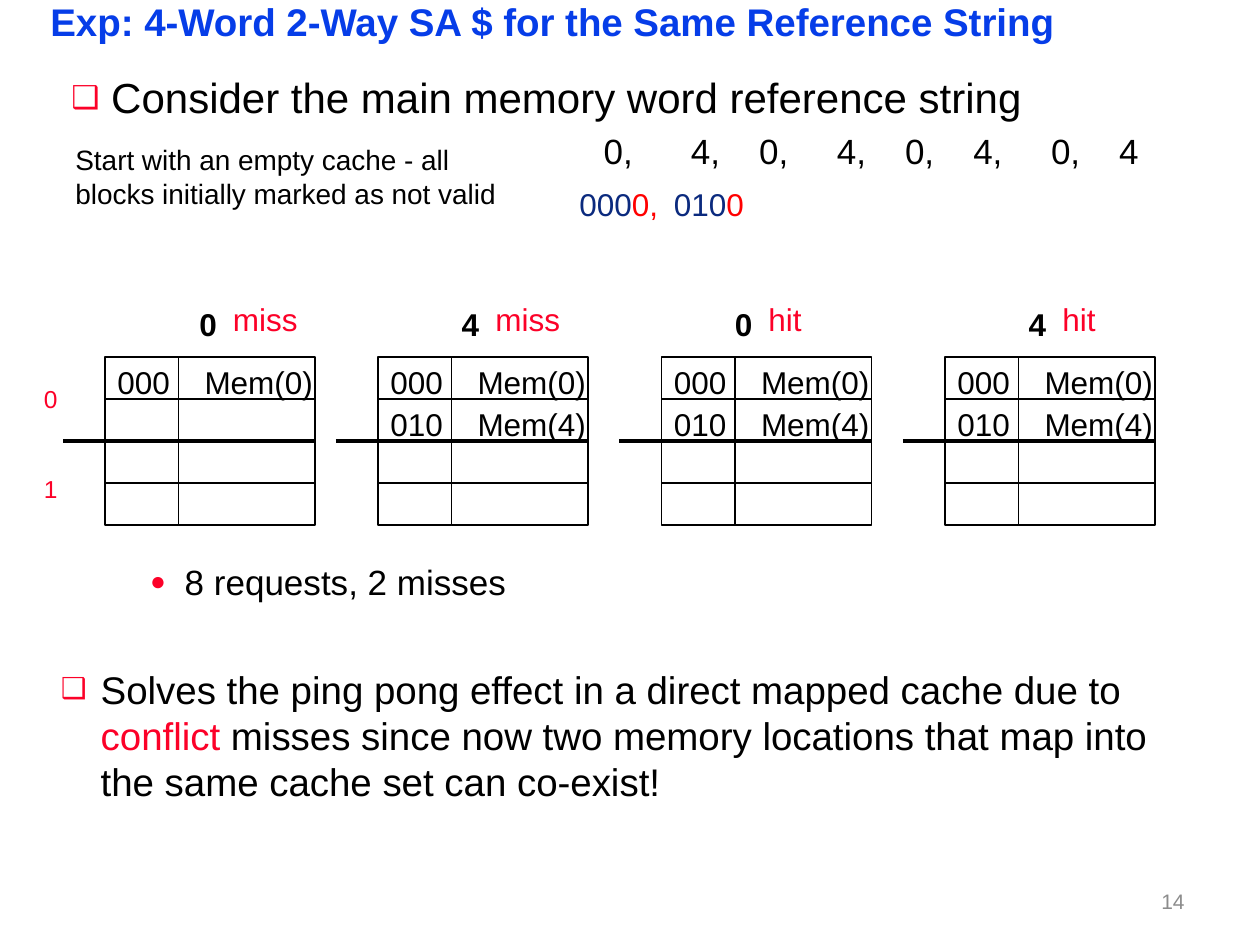
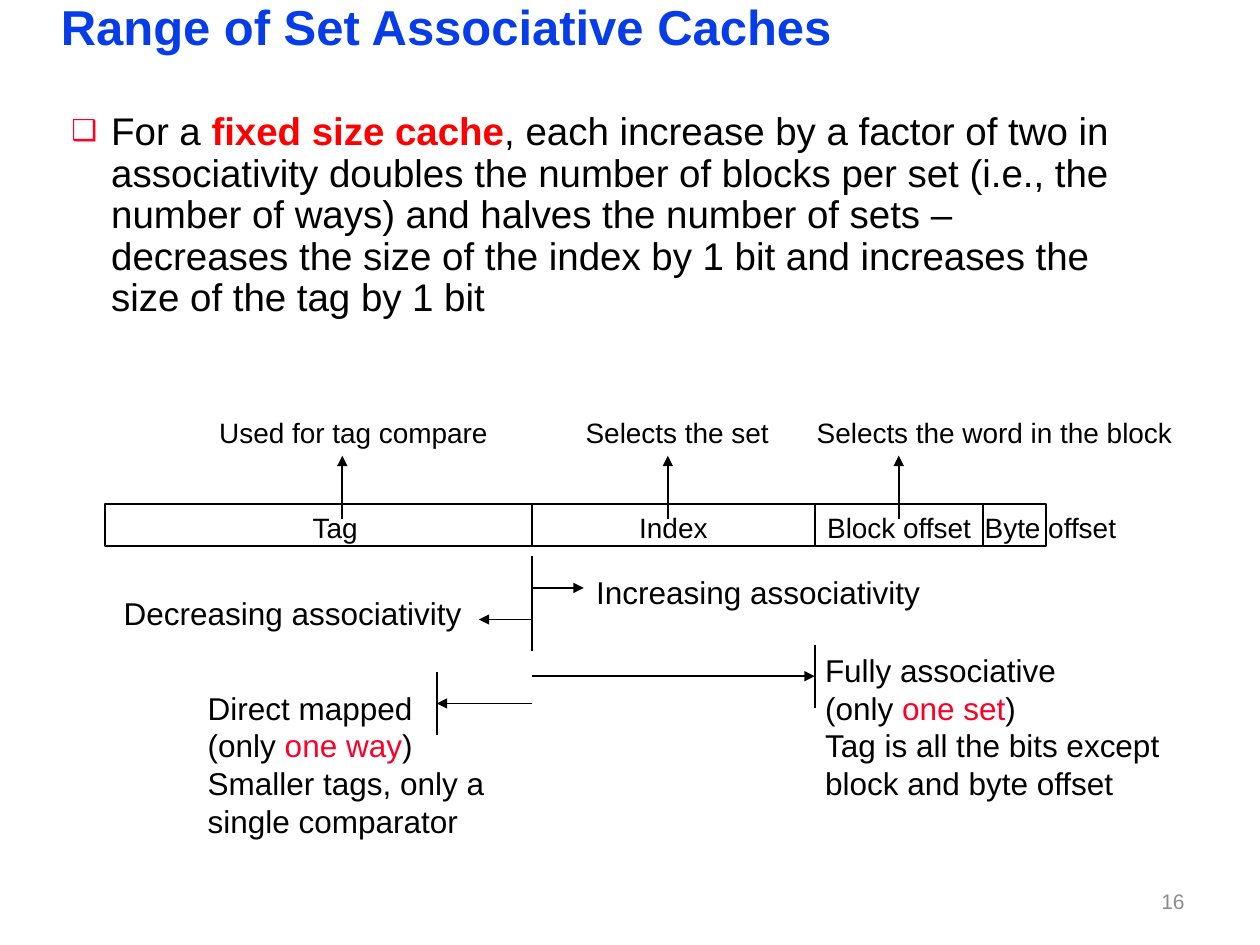
from dataclasses import dataclass

from lxml import etree
from pptx import Presentation
from pptx.dml.color import RGBColor
from pptx.enum.shapes import MSO_CONNECTOR, MSO_SHAPE
from pptx.enum.text import MSO_ANCHOR, MSO_AUTO_SIZE, PP_ALIGN
from pptx.oxml.ns import qn
from pptx.util import Pt

LEFT, RIGHT = PP_ALIGN.LEFT, PP_ALIGN.RIGHT
TOP, MIDDLE = MSO_ANCHOR.TOP, MSO_ANCHOR.MIDDLE
FIT_SHAPE = MSO_AUTO_SIZE.SHAPE_TO_FIT_TEXT
STRAIGHT, RECTANGLE = MSO_CONNECTOR.STRAIGHT, MSO_SHAPE.RECTANGLE
PX = 7620  # 120 px to the inch
TITLE_ONLY = 5


@dataclass(frozen=True)
class Theme:
    font: str = "Arial"
    ink: str = "000000"
    title: str = "063DE8"
    accent: str = "FC0128"
    red: str = "FF0000"
    navy: str = "0B2A7E"
    grey: str = "8C8C8C"
    lead: int = 24
    body: int = 22
    detail: int = 20
    label: int = 18
    note: int = 16
    small: int = 14
    footer: int = 12
    thin: float = 1
    thick: float = 2.25


theme = Theme()
SQUARE = {"bullet": "❑", "margin": 38, "hang": 38, "inset": (8, 4)}
DOT = {"bullet": "●", "margin": 98, "hang": 33, "inset": (8, 4)}


def write(page, place, text, frame=None, size=theme.label, color=theme.ink, bold=False,
          align=LEFT, anchor=TOP, wrap=True, inset=(12, 6), spacing=None, before=None,
          bullet=None, margin=0, hang=0, tabs=()):
    """Write paragraphs of spans; a span is a string or (string, colour, bold)."""
    if place:
        if frame is None:
            frame = page.shapes.add_textbox(*[length * PX for length in place]).text_frame
        frame.word_wrap, frame.vertical_anchor = wrap, anchor
        frame.auto_size = FIT_SHAPE
        frame.margin_left = frame.margin_right = inset[0] * PX
        frame.margin_top = frame.margin_bottom = inset[1] * PX
    for number, spans in enumerate([text] if isinstance(text, str) else text):
        para = frame.add_paragraph() if number or frame.text else frame.paragraphs[0]
        para.alignment = align
        if spacing:
            para.line_spacing = spacing
        if before:
            para.space_before = Pt(before)
        properties = para._p.get_or_add_pPr()
        if bullet:
            properties.set("marL", str(margin * PX))
            properties.set("indent", str(-hang * PX))
            tint = etree.SubElement(properties, qn("a:buClr"))
            etree.SubElement(tint, qn("a:srgbClr"), val=theme.accent)
            etree.SubElement(properties, qn("a:buSzPct"), val="75000")
            etree.SubElement(properties, qn("a:buFont"), typeface=theme.font)
            etree.SubElement(properties, qn("a:buChar"), char=bullet)
        if tabs:
            stops = etree.SubElement(properties, qn("a:tabLst"))
            for stop in tabs:
                etree.SubElement(stops, qn("a:tab"), pos=str(stop * PX), algn="l")
        for span in [spans] if isinstance(spans, str) else spans:
            words, tone, heavy = (span, color, bold) if isinstance(span, str) else span
            run = para.add_run()
            run.text = words
            run.font.name, run.font.size, run.font.bold = theme.font, Pt(size), heavy
            run.font.color.rgb = RGBColor.from_string(tone)
    return frame


def draw_line(page, start, end, width=theme.thin, arrow=False):
    connector = page.shapes.add_connector(
        STRAIGHT, *[length * PX for length in (*start, *end)])
    connector.line.color.rgb = RGBColor.from_string(theme.ink)
    connector.line.width = Pt(width)
    properties = connector._element.spPr
    if arrow:
        etree.SubElement(properties.find(qn("a:ln")), qn("a:tailEnd"), type="triangle")
    etree.SubElement(properties, qn("a:effectLst"))


deck = Presentation()
deck.slide_width, deck.slide_height = 1200 * PX, 900 * PX

# Titles and page numbers
pages = []
for heading, size, place, number in (
    ("Exp: 4-Word 2-Way SA $ for the Same Reference String", 22, (40, 0, 1070, 46), "14"),
    ("Range of Set Associative Caches", 28, (50, 0, 1070, 55), "16"),
):
    page = deck.slides.add_slide(deck.slide_layouts[TITLE_ONLY])
    title = page.shapes.title
    title.left, title.top, title.width, title.height = [length * PX for length in place]
    write(page, place, heading, frame=title.text_frame, size=size, color=theme.title,
          bold=True, inset=(8, 4), spacing=0.87)
    write(page, (860, 834, 280, 48), number, size=theme.footer, color=theme.grey,
          align=RIGHT, anchor=MIDDLE)
    pages.append(page)
example, associativity = pages

# Outlines of the cache columns and of the address bar
ROW, ROWS, CACHE_TOP = 40, 4, 340
TAG_WIDTH, DATA_WIDTH = 70, 130
BAR_TOP, BAR_HEIGHT = 480, 40
CACHES = (100, 360, 630, 900)
columns = [(x + shift, width) for x in CACHES
           for shift, width in ((0, TAG_WIDTH), (TAG_WIDTH, DATA_WIDTH))]
outlines = [(example, (x, CACHE_TOP, width, ROWS * ROW)) for x, width in columns]
outlines.append((associativity, (100, BAR_TOP, 896, BAR_HEIGHT)))
for page, place in outlines:
    outline = page.shapes.add_shape(RECTANGLE, *[length * PX for length in place])
    outline.shadow.inherit = False
    outline.fill.background()
    outline.line.color.rgb = RGBColor.from_string(theme.ink)
    outline.line.width = Pt(theme.thin)
for x, width in columns:
    for row in range(1, ROWS):
        y = CACHE_TOP + row * ROW
        draw_line(example, (x, y), (x + width, y))

# Reference string
lead = write(example, (60, 70, 1070, 101), "Consider the main memory word reference string",
             size=theme.lead, spacing=0.9, **SQUARE)
write(example, None, "\t0,\t4,\t0,\t4,\t0,\t4,\t0,\t4", frame=lead, size=theme.detail,
      spacing=0.85, before=7.3, tabs=(507, 590, 655, 729, 794, 859, 933, 998))
write(example, (60, 130, 450, 77),
      "Start with an empty cache - all blocks initially marked as not valid", size=theme.note)
for x, width, tag, index in ((540, 100, "000", "0,"), (630, 91, "010", "0")):
    write(example, (x, 170, width, 48), [[(tag, theme.navy, False), (index, theme.red, False)]],
          wrap=False)

# Cache contents after each reference
first_block, second_block = "000\tMem(0)", "010\tMem(4)"
for x, outcome_x, word, outcome, blocks in zip(
    CACHES, (210, 460, 720, 1000), "0404", ("miss", "miss", "hit", "hit"),
    ([first_block], *[[first_block, second_block]] * 3),
):
    write(example, (outcome_x - 32, 285, 41, 48), word, bold=True, wrap=False)
    write(example, (outcome_x, 280, 86 if outcome == "miss" else 56, 48), outcome,
          color=theme.accent, wrap=False)
    for row, block in enumerate(blocks):
        write(example, (x, CACHE_TOP + row * ROW, 211, 48), block, wrap=False, tabs=(83,))
    middle = CACHE_TOP + 2 * ROW
    draw_line(example, (x - 40, middle), (x + TAG_WIDTH + DATA_WIDTH, middle),
              width=theme.thick)
for set_number, y in (("0", 360), ("1", 446)):
    write(example, (30, y, 40, 43), set_number, size=theme.small, color=theme.accent)

# Conclusions
write(example, (70, 530, 1070, 47), "8 requests, 2 misses", size=theme.detail, **DOT)
write(example, (50, 630, 1070, 140),
      [["Solves the ping pong effect in a direct mapped cache due to ",
        ("conflict", theme.accent, False),
        " misses since now two memory locations that map into the same cache set can co-exist!"]],
      size=theme.body, **SQUARE)

# Rule for a fixed size cache
write(associativity, (60, 103, 1010, 206),
      [["For a ", ("fixed size cache", theme.red, True),
        ", each increase by a factor of two in associativity doubles the number of blocks "
        "per set (i.e., the number of ways) and halves the number of sets – decreases the "
        "size of the index by 1 bit and increases the size of the tag by 1 bit"]],
      size=theme.body, spacing=0.9, **SQUARE)

# Address fields
TAG_END, INDEX_END, BLOCK_END = 507, 776, 936
for x in (TAG_END, INDEX_END, BLOCK_END):
    draw_line(associativity, (x, BAR_TOP), (x, BAR_TOP + BAR_HEIGHT))
for x, width, field in ((286, 70, "Tag"), (597, 89, "Index"),
                        (776, 162, "Block offset"), (926, 150, "Byte offset")):
    write(associativity, (x, BAR_TOP, width, 44), field, size=theme.note, wrap=False)

# Purpose of each field
for x, width, arrow_x, purpose in (
    (197, 281, 326, "Used for tag compare"),
    (546, 199, 636, "Selects the set"),
    (766, 364, 856, "Selects the word in the block"),
):
    write(associativity, (x, 390, width, 44), purpose, size=theme.note, wrap=False)
    draw_line(associativity, (arrow_x, 494), (arrow_x, 434), arrow=True)

# Directions of associativity: arrows from the tag boundary, and limit marks
for y, end in ((560, 556), (590, 456), (644, INDEX_END), (670, 416)):
    draw_line(associativity, (TAG_END, y), (end, y), arrow=True)
for x, top, bottom in ((TAG_END, 530, 590), (TAG_END, 570, 620),
                       (INDEX_END, 614, 674), (416, 640, 700)):
    draw_line(associativity, (x, top), (x, bottom))
write(associativity, (556, 540, 340, 48), "Increasing associativity", wrap=False)
write(associativity, (106, 560, 346, 48), "Decreasing associativity", wrap=False)
write(associativity, (774, 614, 346, 156),
      ["Fully associative", ["(only ", ("one set", theme.accent, False), ")"],
       "Tag is all the bits except", "block and byte offset"], wrap=False)
write(associativity, (186, 650, 313, 157),
      ["Direct mapped", ["(only ", ("one way", theme.accent, False), ")"],
       "Smaller tags, only a single comparator"])

deck.save("out.pptx")
